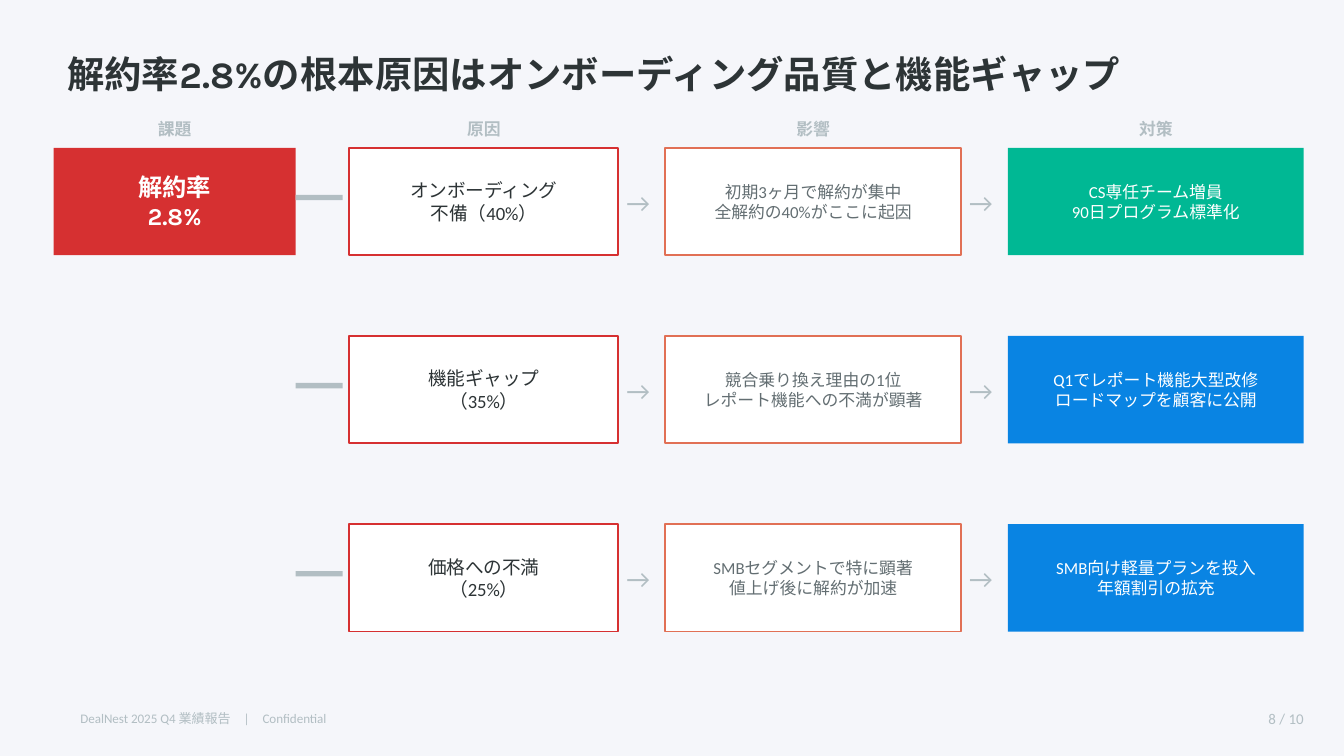
from pptx import Presentation
from pptx.dml.color import RGBColor
from pptx.enum.shapes import MSO_SHAPE
from pptx.enum.text import MSO_ANCHOR, MSO_AUTO_SIZE, PP_ALIGN
from pptx.util import Inches, Pt

RECT = MSO_SHAPE.RECTANGLE
MIDDLE = MSO_ANCHOR.MIDDLE
NO_FIT = MSO_AUTO_SIZE.NONE
LEFT, CENTER, RIGHT = PP_ALIGN.LEFT, PP_ALIGN.CENTER, PP_ALIGN.RIGHT

HEAD, BODY = "Karla", "Calibri"
INK, GREY, MUTED, WHITE = "2D3436", "636E72", "B2BEC3", "FFFFFF"
RED, ORANGE, GREEN, BLUE = "D63031", "E17055", "00B894", "0984E3"

rgb = RGBColor.from_string

prs = Presentation()
prs.slide_width = Inches(10)
prs.slide_height = prs.slide_width * 9 // 16
s = prs.slides.add_slide(prs.slide_layouts[5])
s.background.fill.solid()
s.background.fill.fore_color.rgb = rgb("F5F6FA")


def add_rect(x, y, w, h, fill, line=None):
    sp = s.shapes.add_shape(RECT, Inches(x), Inches(y), Inches(w), Inches(h))
    sp.shadow.inherit = False
    sp.fill.solid()
    sp.fill.fore_color.rgb = rgb(fill)
    if line:
        sp.line.color.rgb = rgb(line)
        sp.line.width = Pt(1)
    else:
        sp.line.fill.background()


def add_text(text, x, y, w, h, size, color, font=BODY, bold=False,
             align=CENTER, inset=(0, 0), sp=None):
    sp = sp or s.shapes.add_textbox(0, 0, 0, 0)
    sp.left, sp.top, sp.width, sp.height = (Inches(v) for v in (x, y, w, h))
    tf = sp.text_frame
    tf.text = text
    tf.word_wrap = True
    tf.auto_size = NO_FIT
    tf.vertical_anchor = MIDDLE
    tf.margin_left = tf.margin_right = Inches(inset[0])
    tf.margin_top = tf.margin_bottom = Inches(inset[1])
    for p in tf.paragraphs:
        p.alignment = align
        for r in p.runs:
            r.font.name = font
            r.font.size = Pt(size)
            r.font.bold = bold
            r.font.color.rgb = rgb(color)


# Title
add_text("解約率2.8%の根本原因はオンボーディング品質と機能ギャップ", 0.5, 0.3, 9, 0.5,
         20, INK, HEAD, True, LEFT, sp=s.shapes.title)

# Grid: column = heading, left, width
columns = [("課題", 0.4, 1.8), ("原因", 2.6, 2), ("影響", 4.95, 2.2), ("対策", 7.5, 2.2)]
TOP, PITCH, BOX_H, PAD = 1.1, 1.4, 0.8, 0.05

# Style per column: fill, line, text size, text colour, font, bold
styles = [
    (RED, None, 13, WHITE, HEAD, True),
    (WHITE, RED, 10, INK, BODY, False),
    (WHITE, ORANGE, 9, GREY, BODY, False),
    (BLUE, None, 9, WHITE, BODY, False),
]
rows = [
    ("解約率\n2.8%", "オンボーディング\n不備（40%）",
     "初期3ヶ月で解約が集中\n全解約の40%がここに起因",
     "CS専任チーム増員\n90日プログラム標準化"),
    (None, "機能ギャップ\n（35%）",
     "競合乗り換え理由の1位\nレポート機能への不満が顕著",
     "Q1でレポート機能大型改修\nロードマップを顧客に公開"),
    (None, "価格への不満\n（25%）",
     "SMBセグメントで特に顕著\n値上げ後に解約が加速",
     "SMB向け軽量プランを投入\n年額割引の拡充"),
]

for i, texts in enumerate(rows):
    y = TOP + i * PITCH
    for j, (text, (_, x, w), style) in enumerate(zip(texts, columns, styles)):
        fill, line, size, color, font, bold = style
        if i == 0 and j == 3:
            fill = GREEN

        # Box and its text; the issue has no inner side padding
        if text:
            pad = PAD if j else 0
            add_rect(x, y, w, BOX_H, fill, line)
            add_text(text, x + pad, y + PAD, w - 2 * pad, BOX_H - 2 * PAD,
                     size, color, font, bold)

        # Link to the next column: a bar after the issue, then arrow signs
        if j == 0:
            add_rect(x + w, y + 0.35, 0.35, 0.04, MUTED)
        elif j < 3:
            add_text("→", x + w, y + 0.15, 0.3, 0.5, 14, MUTED)

# Column headings
for heading, x, w in columns:
    add_text(heading, x, 0.85, w, 0.22, 9, MUTED, HEAD, True)

# Footer
add_text("8 / 10", 9.1, 5.22, 0.7, 0.25, 8, MUTED, align=RIGHT, inset=(0.1, 0.05))
add_text("DealNest 2025 Q4 業績報告　|　Confidential", 0.5, 5.22, 4, 0.25, 7, MUTED,
         align=LEFT, inset=(0.1, 0.05))

prs.save("out.pptx")
